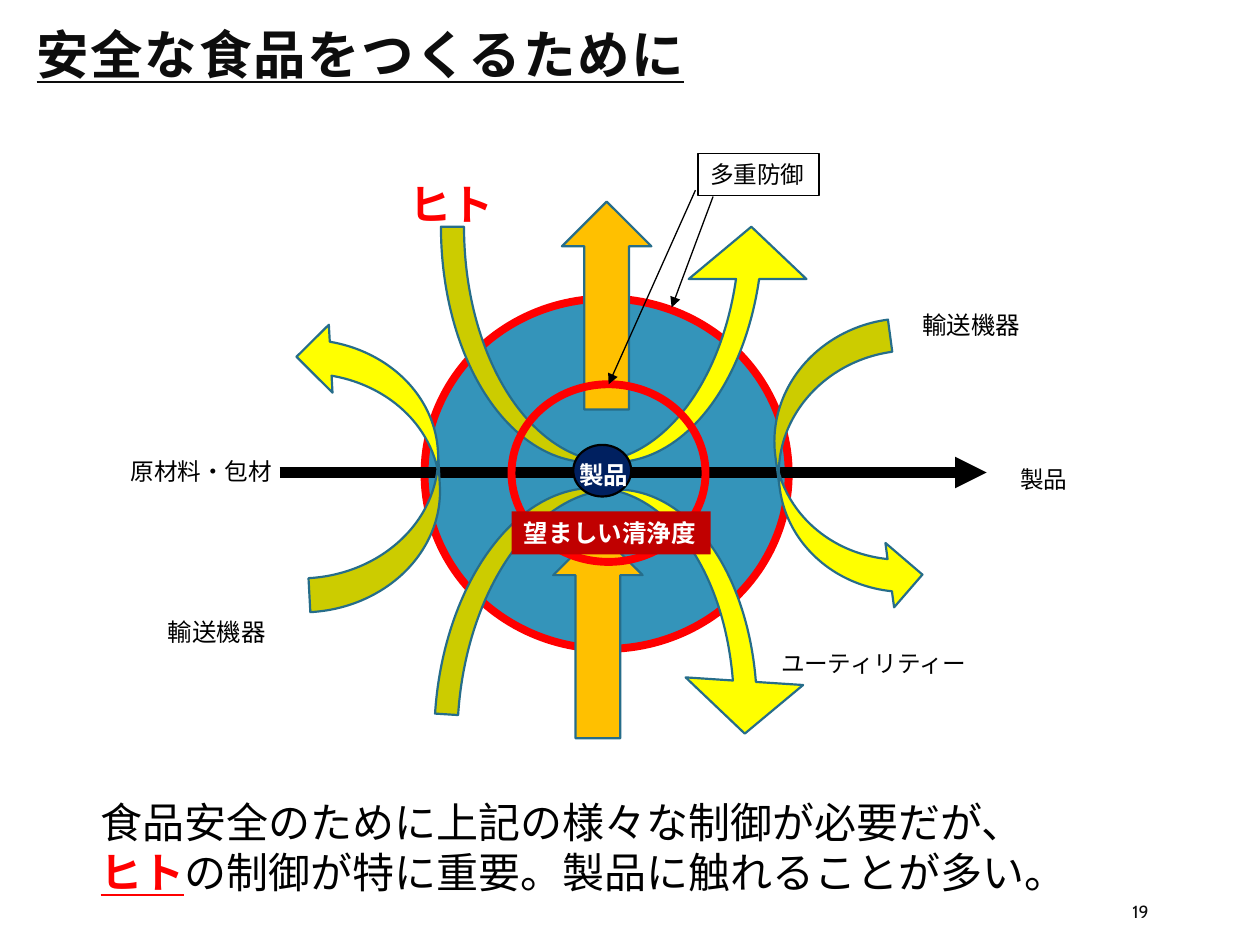
"""Build the slide on layered control of flows around a food product."""
from dataclasses import dataclass

from lxml import etree
from pptx import Presentation
from pptx.dml.color import RGBColor
from pptx.enum import shapes, text
from pptx.oxml import ns
from pptx.util import Pt


@dataclass(frozen=True)
class Theme:
    heading_font: str = "Cabin"
    body_font: str = "Calibri"
    ink: str = "000000"
    soft_ink: str = "0D0D0D"
    white: str = "FFFFFF"
    alert: str = "FF0000"
    zone: str = "3494BA"
    outline: str = "266D8A"
    flow: str = "FFFF00"
    block: str = "FFC000"
    product: str = "002060"
    banner: str = "C00000"
    title_size: float = 30
    large_size: float = 24
    label_size: float = 14
    small_size: float = 13.5
    number_size: float = 10


theme = Theme()
SHAPE = shapes.MSO_SHAPE

TITLE = ("安全な食品をつくるために", (13.7, 15.8, 626.4, 62.6))
MESSAGE_BOX = (50.4, 451.4, 669.6, 65.5)
MESSAGE = [
    [("食品安全のために上記の様々な制御が必要だが、", False)],
    [("ヒト", True), ("の制御が特に重要。製品に触れることが多い。", False)],
]
PAGE_NUMBER = ("19", (640, 509.8, 57.6, 21.6))

ZONE = (242.6, 170.6, 208.1, 200.2)
RING = (292.3, 219.6, 110.9, 101.5)
PRODUCT = (327.6, 254.2, 33.1, 29.5)
PROCESS_LINE = (159.8, 270, 563.8, 270)
DEFENCE_POINTERS = [(397.4, 108.7, 347.8, 219.6), (407.5, 112.3, 383.8, 175.7)]

SLIM = (0.098, 0.5, 0.222)
FLOW_ARROWS = [
    ((128.9, 226.1, 165.6, 77.8), 266.9, False, ()),
    ((252, 129.6, 211, 134.6), 0, False, SLIM),
    ((398.9, 232.6, 165.6, 74.2), 82.3, False, ()),
    ((252.7, 280.1, 211, 134.6), 183.7, True, SLIM),
]
BLOCK_ARROWS = [(316.1, 303.1, 51.1, 118.8), (321.1, 115.2, 51.1, 118.8)]

LABELS = [
    ("原材料・包材", (67.7, 257.8, 96.5, 23.8), theme.small_size),
    ("製品", (576, 262.1, 41.8, 23.8), theme.small_size),
    ("ユーティリティー", (439.2, 367.2, 123.8, 23.8), theme.small_size),
    ("輸送機器", (88.6, 349.2, 71.3, 24.5), theme.label_size),
    ("輸送機器", (519.8, 173.5, 71.3, 24.5), theme.label_size),
]
BOLD_LABELS = [
    ("ヒト", (226.8, 98.6, 63.4, 36), theme.large_size, theme.alert),
    ("製品", (324, 259.2, 42.5, 24.5), theme.label_size, theme.white),
]
DEFENCE = ("多重防御", (398.9, 87.8, 69.1, 23.8))
CLEANLINESS = ("望ましい清浄度", (292.3, 292.3, 113.8, 24.5))


def points(values):
    return [Pt(value) for value in values]


def rgb(color):
    return RGBColor.from_string(color)


def style_font(font, size, color, bold=False, name=theme.body_font):
    font.name, font.size, font.bold = name, Pt(size), bold
    font.color.rgb = rgb(color)


def add_shape(slide, kind, box, fill=None, line=None, width=1.25):
    shape = slide.shapes.add_shape(kind, *points(box))
    shape.shadow.inherit = False
    if fill:
        shape.fill.solid()
        shape.fill.fore_color.rgb = rgb(fill)
    else:
        shape.fill.background()
    if line:
        shape.line.color.rgb = rgb(line)
        shape.line.width = Pt(width)
    else:
        shape.line.fill.background()
    return shape


def add_arrow_line(slide, ends, width):
    connector = slide.shapes.add_connector(shapes.MSO_CONNECTOR.STRAIGHT, *points(ends))
    connector.line.color.rgb = rgb(theme.ink)
    connector.line.width = Pt(width)
    properties = connector._element.spPr
    etree.SubElement(properties.find(ns.qn("a:ln")), ns.qn("a:tailEnd"), type="triangle")
    etree.SubElement(properties, ns.qn("a:effectLst"))


def write_label(shape, words, size, color=theme.ink, bold=False):
    frame = shape.text_frame
    frame.word_wrap = False
    frame.auto_size = text.MSO_AUTO_SIZE.SHAPE_TO_FIT_TEXT
    frame.vertical_anchor = text.MSO_ANCHOR.TOP
    paragraph = frame.paragraphs[0]
    paragraph.text = words
    paragraph.alignment = text.PP_ALIGN.LEFT
    style_font(paragraph.font, size, color, bold)


def add_label(slide, words, box, size, color=theme.ink, bold=False):
    write_label(slide.shapes.add_textbox(*points(box)), words, size, color, bold)


def add_title(slide):
    words, box = TITLE
    title = slide.shapes.title
    title.left, title.top, title.width, title.height = points(box)
    frame = title.text_frame
    frame.vertical_anchor = text.MSO_ANCHOR.TOP
    frame.auto_size = text.MSO_AUTO_SIZE.NONE
    paragraph = frame.paragraphs[0]
    paragraph.alignment = text.PP_ALIGN.LEFT
    paragraph.line_spacing = 0.8
    run = paragraph.add_run()
    run.text = words
    style_font(run.font, theme.title_size, theme.soft_ink, True, theme.heading_font)
    run.font.underline = True
    run._r.get_or_add_rPr().set("spc", "100")


def add_diagram(slide):
    add_shape(slide, SHAPE.OVAL, ZONE, theme.zone, theme.alert, 4.5)
    add_arrow_line(slide, PROCESS_LINE, 6)
    for box, rotation, mirrored, adjustments in FLOW_ARROWS:
        arrow = add_shape(slide, SHAPE.CURVED_UP_ARROW, box, theme.flow, theme.outline)
        arrow.rotation = rotation
        if mirrored:
            arrow._element.spPr.find(ns.qn("a:xfrm")).set("flipH", "1")
        for index, value in enumerate(adjustments):
            arrow.adjustments[index] = value
    for box in BLOCK_ARROWS:
        add_shape(slide, SHAPE.UP_ARROW, box, theme.block, theme.outline)
    add_shape(slide, SHAPE.OVAL, RING, line=theme.alert, width=4.5)
    add_shape(slide, SHAPE.OVAL, PRODUCT, theme.product, theme.ink)
    for ends in DEFENCE_POINTERS:
        add_arrow_line(slide, ends, 0.75)


def add_labels(slide):
    for words, box, size in LABELS:
        add_label(slide, words, box, size)
    for words, box, size, color in BOLD_LABELS:
        add_label(slide, words, box, size, color, True)
    words, box = DEFENCE
    defence = add_shape(slide, SHAPE.RECTANGLE, box, line=theme.ink, width=0.75)
    write_label(defence, words, theme.small_size)
    words, box = CLEANLINESS
    banner = add_shape(slide, SHAPE.RECTANGLE, box, theme.banner)
    write_label(banner, words, theme.label_size, theme.white, True)


def add_message(slide):
    frame = slide.shapes.add_textbox(*points(MESSAGE_BOX)).text_frame
    frame.word_wrap = True
    frame.auto_size = text.MSO_AUTO_SIZE.SHAPE_TO_FIT_TEXT
    for index, parts in enumerate(MESSAGE):
        paragraph = frame.add_paragraph() if index else frame.paragraphs[0]
        for words, stressed in parts:
            run = paragraph.add_run()
            run.text = words
            color = theme.alert if stressed else theme.ink
            style_font(run.font, theme.large_size, color, stressed)
            run.font.underline = stressed


def add_page_number(slide):
    words, box = PAGE_NUMBER
    frame = slide.shapes.add_textbox(*points(box)).text_frame
    frame.word_wrap = True
    frame.vertical_anchor = text.MSO_ANCHOR.MIDDLE
    paragraph = frame.paragraphs[0]
    paragraph.text = words
    style_font(paragraph.font, theme.number_size, theme.soft_ink, name=theme.heading_font)


def main():
    presentation = Presentation()
    presentation.slide_width, presentation.slide_height = Pt(720), Pt(540)
    slide = presentation.slides.add_slide(presentation.slide_layouts.get_by_name("Title Only"))
    for add_part in (add_title, add_diagram, add_labels, add_message, add_page_number):
        add_part(slide)
    presentation.save("out.pptx")


if __name__ == "__main__":
    main()
